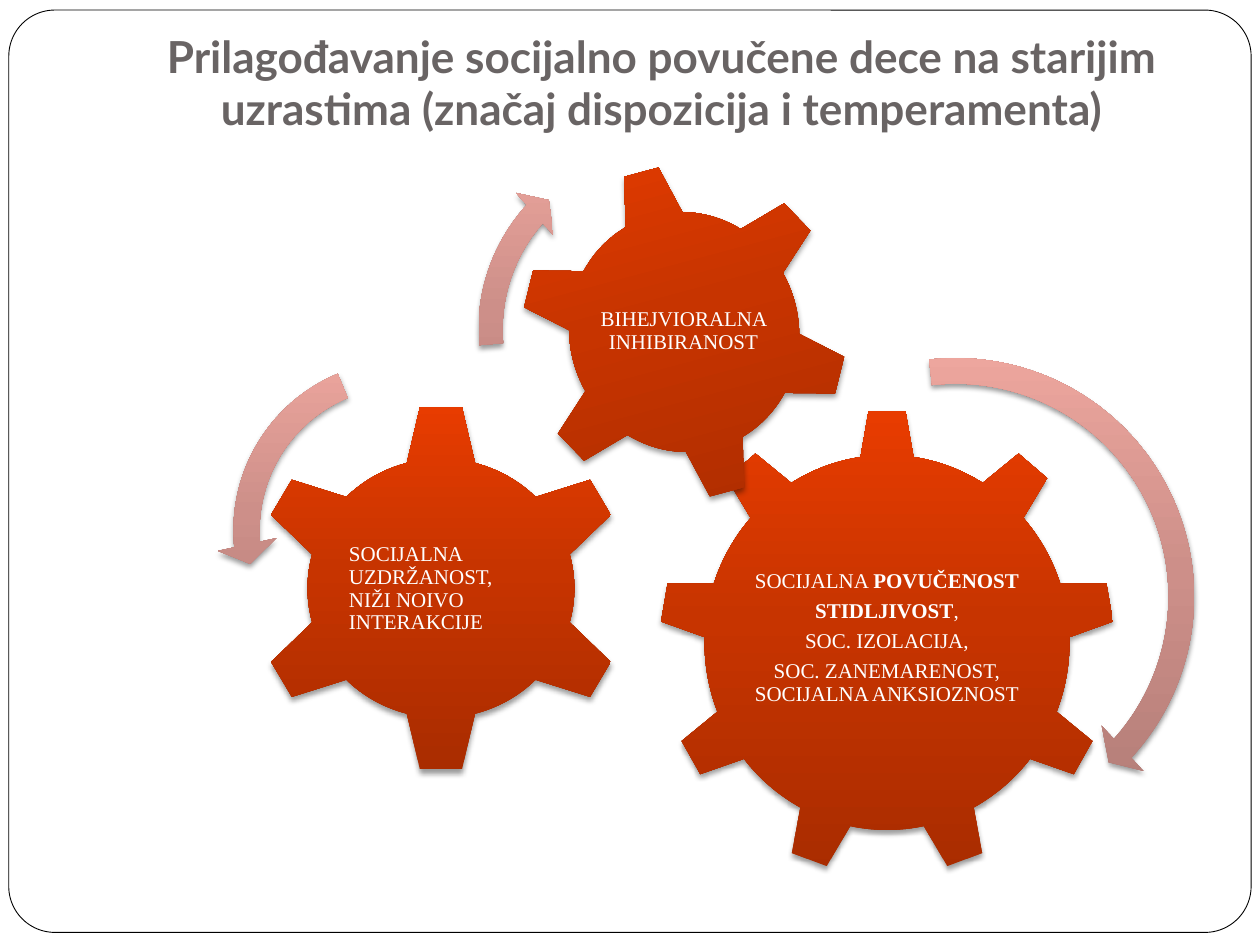
from lxml.etree import SubElement
from pptx import Presentation
from pptx.dml.color import RGBColor
from pptx.enum.shapes import MSO_SHAPE
from pptx.enum.text import MSO_ANCHOR, MSO_AUTO_SIZE, PP_ALIGN
from pptx.oxml.ns import qn
from pptx.util import Inches, Pt

COLORS = {"paper": "FFFFFF", "frame": "000000", "title": "696464",
          "label": "FFFFFF", "shadow": "000000"}
GEAR_STOPS = {0: "A92C00", 55: "C73400", 100: "E83C00"}
ARROW_STOPS = {0: "AE7A74", 55: "CD8F89", 100: "EFA79F"}

# Shape, box, rotation, label box, label alignment, label paragraphs of (text, bold)
GEARS = [
    (MSO_SHAPE.GEAR_9, (5.23, 3.25, 3.62, 3.7), 0, (5.96, 4.11, 2.16, 1.91), PP_ALIGN.CENTER,
     [[("SOCIJALNA ", False), ("POVUČENOST", True)],
      [("STIDLJIVOST", True), (",", False)],
      [("SOC. IZOLACIJA,", False)],
      [("SOC. ZANEMARENOST, SOCIJALNA ANKSIOZNOST", False)]]),
    (MSO_SHAPE.GEAR_6, (2, 3.2, 3, 2.94), 0, (2.75, 3.95, 1.5, 1.45), PP_ALIGN.LEFT,
     [[("SOCIJALNA UZDRŽANOST, NIŽI NOIVO INTERAKCIJE", False)]]),
    (MSO_SHAPE.GEAR_6, (4.13, 1.29, 2.6, 2.69), 345, (4.69, 1.88, 1.47, 1.5), PP_ALIGN.CENTER,
     [[("BIHEJVIORALNA INHIBIRANOST", False)]]),
]
# Shape, box, adjustments
ARROWS = [
    (MSO_SHAPE.CIRCULAR_ARROW, (5.55, 2.7, 4.07, 4.07), (0.05, 2.99, 25.37, 158.17, 0.06)),
    (MSO_SHAPE.LEFT_CIRCULAR_ARROW, (1.72, 2.73, 2.96, 2.96), (0.07, 4.3, 104.89, 148.38, 0.08)),
    (MSO_SHAPE.CIRCULAR_ARROW, (3.67, 1.02, 3.19, 3.19), (0.06, 3.94, 133.14, 105.08, 0.07)),
]


def color(name):
    return RGBColor.from_string(COLORS[name])


class SlideBuilder:
    def __init__(self, slide):
        self.slide = slide
        self.title_font = "Lato"
        self.label_font = "Times New Roman"

    def frame(self, box):
        """Draw the rounded border behind everything else."""
        shape = self.slide.shapes.add_shape(MSO_SHAPE.ROUNDED_RECTANGLE, *map(Inches, box))
        shape.adjustments[0] = 0.05
        shape.shadow.inherit = False
        shape.fill.solid()
        shape.fill.fore_color.rgb = color("paper")
        shape.line.color.rgb = color("frame")
        shape.line.width = Pt(0.5)
        self.slide.shapes.element.insert(2, shape.element)

    def title(self, text, box):
        title = self.slide.shapes.title
        title.left, title.top, title.width, title.height = map(Inches, box)
        text_frame = title.text_frame
        text_frame.text = text
        text_frame.word_wrap = True
        text_frame.auto_size = MSO_AUTO_SIZE.NONE
        text_frame.vertical_anchor = MSO_ANCHOR.BOTTOM
        text_frame.margin_bottom = Inches(0.1)
        paragraph = text_frame.paragraphs[0]
        paragraph.alignment = PP_ALIGN.CENTER
        self.format_run(paragraph.runs[0], self.title_font, 25.2, "title", True)

    def glossy_shape(self, kind, box, stops, rotation=0, adjustments=()):
        """Add a borderless shape with a vertical gradient and a soft shadow."""
        shape = self.slide.shapes.add_shape(kind, *map(Inches, box))
        shape.rotation = rotation
        for index, value in enumerate(adjustments):
            shape.adjustments[index] = value
        shape.line.fill.background()
        shape.fill.gradient()
        shape.fill.gradient_angle = 90
        stop_list = shape.element.spPr.find(".//" + qn("a:gsLst"))
        for stop in list(stop_list):
            stop_list.remove(stop)
        for position, value in stops.items():
            stop = SubElement(stop_list, qn("a:gs"), pos=str(position * 1000))
            SubElement(stop, qn("a:srgbClr"), val=value)
        self.cast_shadow(shape)

    def cast_shadow(self, shape):
        shape.shadow.inherit = False
        effects = shape.element.spPr.find(qn("a:effectLst"))
        shadow = SubElement(effects, qn("a:outerShdw"), blurRad=str(Pt(3.1)), dist=str(Pt(2)),
                            dir="5400000", rotWithShape="0")
        shade = SubElement(shadow, qn("a:srgbClr"), val=COLORS["shadow"])
        SubElement(shade, qn("a:alpha"), val="38000")

    def label(self, box, alignment, paragraphs):
        text_frame = self.slide.shapes.add_textbox(*map(Inches, box)).text_frame
        text_frame.word_wrap = True
        text_frame.vertical_anchor = MSO_ANCHOR.MIDDLE
        text_frame.margin_left = text_frame.margin_right = Inches(0.02)
        text_frame.margin_top = text_frame.margin_bottom = Inches(0.02)
        for index, runs in enumerate(paragraphs):
            paragraph = text_frame.add_paragraph() if index else text_frame.paragraphs[0]
            paragraph.alignment = alignment
            paragraph.line_spacing = 0.9
            paragraph.space_after = Pt(4.2)
            for text, bold in runs:
                run = paragraph.add_run()
                run.text = text
                self.format_run(run, self.label_font, 12, "label", bold)

    def format_run(self, run, font_name, size, color_name, bold):
        run.font.name = font_name
        run.font.size = Pt(size)
        run.font.bold = bold
        run.font.color.rgb = color(color_name)


def main():
    presentation = Presentation()
    presentation.slide_width = Inches(10)
    presentation.slide_height = Inches(7.5)
    builder = SlideBuilder(presentation.slides.add_slide(presentation.slide_layouts[5]))
    builder.frame((0.07, 0.08, 9.86, 7.32))
    builder.title("Prilagođavanje socijalno povučene dece na starijim uzrastima "
                  "(značaj dispozicija i temperamenta)", (1, 0.3, 8.5, 0.87))
    for kind, box, rotation, label_box, alignment, paragraphs in GEARS:
        builder.glossy_shape(kind, box, GEAR_STOPS, rotation=rotation)
        builder.label(label_box, alignment, paragraphs)
    for kind, box, adjustments in ARROWS:
        builder.glossy_shape(kind, box, ARROW_STOPS, adjustments=adjustments)
    presentation.save("out.pptx")


if __name__ == "__main__":
    main()
